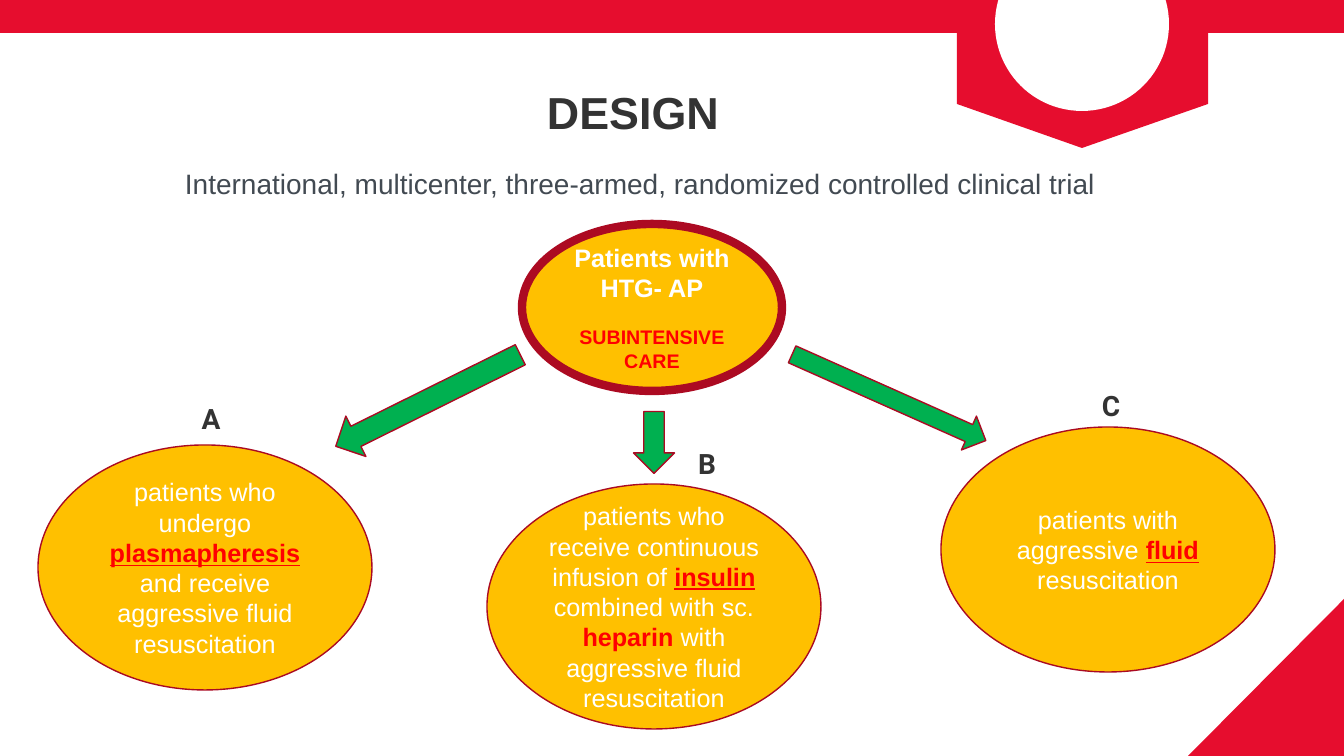
from collections import namedtuple

from pptx import Presentation
from pptx.dml.color import RGBColor
from pptx.enum.shapes import MSO_SHAPE as Preset
from pptx.enum.text import MSO_ANCHOR as Anchor, PP_ALIGN as Align
from pptx.util import Emu, Pt

Box = namedtuple("Box", "left top width height")

EMU_PER_PX = 914400 / 100.8
PAGE_BOX = Box(0, 0, 1344, 756)
ARM_WIDTH, ARM_HEIGHT = 334, 245

RED, GOLD, GREEN, WHITE = "E60D2E", "FFC000", "00B050", "FFFFFF"
OUTLINE, ALERT, DARK, SLATE = "AA0A22", "FF0000", "333333", "424A52"


def px(length):
    return Emu(round(length * EMU_PER_PX))


def color(hex_value):
    return RGBColor.from_string(hex_value)


def paint(shape, fill, line=None, line_width=1):
    shape.shadow.inherit = False
    shape.fill.solid()
    shape.fill.fore_color.rgb = color(fill)
    if line:
        shape.line.color.rgb = color(line)
        shape.line.width = Pt(line_width)
    else:
        shape.line.fill.background()


def add_preset(page, preset, box, fill, line=None, line_width=1):
    shape = page.shapes.add_shape(preset, *map(px, box))
    paint(shape, fill, line, line_width)
    return shape


def add_polygon(page, points, fill):
    builder = page.shapes.build_freeform(*points[0], scale=EMU_PER_PX)
    builder.add_line_segments(points[1:], close=True)
    paint(builder.convert_to_shape(), fill)


def style(font, size, hex_value, bold=False, name="Arial"):
    font.name, font.size, font.bold = name, Pt(size), bold
    font.color.rgb = color(hex_value)


def add_label(page, box, text, size, hex_value, bold=False, name="Arial",
              align=Align.CENTER):
    frame = page.shapes.add_textbox(*map(px, box)).text_frame
    frame.word_wrap = True
    para = frame.paragraphs[0]
    para.text, para.alignment = text, align
    style(para.font, size, hex_value, bold, name)
    return frame


def add_decoration(page, box):
    right, bottom = box.left + box.width, box.top + box.height
    add_preset(page, Preset.RECTANGLE, box._replace(height=33), RED)
    # Corner triangle
    add_polygon(page, [(right, bottom - 157), (right, bottom),
                       (right - 156, bottom)], RED)
    # Shield with a round opening
    left, top, width = box.left + 957, box.top, 251
    add_polygon(page, [(left, top), (left + width, top),
                       (left + width, top + 104),
                       (left + width / 2, top + 148), (left, top + 104)], RED)
    add_preset(page, Preset.OVAL, Box(left + 38, top - 63, 174, 174), WHITE)


def add_heading(page, box):
    add_label(page, Box(box.left + 328, box.top, 260, 64), "DESIGN",
              32, DARK, bold=True)
    add_label(page, Box(box.left, box.top + 82, box.width, 44),
              "International, multicenter, three-armed, randomized "
              "controlled clinical trial", 20, SLATE, align=Align.LEFT)


def add_hub(page, box):
    oval = add_preset(page, Preset.OVAL, box, GOLD, "AC0A22", 6)
    frame = oval.text_frame
    frame.word_wrap, frame.vertical_anchor = True, Anchor.MIDDLE
    group = frame.paragraphs[0]
    group.text = "Patients with HTG- AP"
    style(group.font, 18, WHITE, bold=True)
    care = frame.add_paragraph()
    care.text = "SUBINTENSIVE CARE"
    care.space_before = Pt(16)
    style(care.font, 14, ALERT, bold=True)
    for para in frame.paragraphs:
        para.alignment = Align.CENTER


def add_arm(page, box, letter, letter_center, letter_top, spans):
    """Draw one trial arm; spans are (text, highlighted, underlined)."""
    frame = add_label(page, Box(box.left + letter_center - 20,
                                box.top + letter_top, 40, 44),
                      letter, 20, DARK, bold=True, name="Roboto")
    frame.margin_left = frame.margin_right = 0

    oval = add_preset(page, Preset.OVAL, box, GOLD, OUTLINE)
    frame = oval.text_frame
    frame.word_wrap, frame.vertical_anchor = True, Anchor.MIDDLE
    para = frame.paragraphs[0]
    para.alignment = Align.CENTER
    for text, highlighted, underlined in spans:
        span = para.add_run()
        span.text = text
        style(span.font, 18, ALERT if highlighted else WHITE, highlighted)
        span.font.underline = underlined


def add_arrow(page, box, angle):
    arrow = add_preset(page, Preset.RIGHT_ARROW, box, GREEN, OUTLINE)
    arrow.rotation = angle


# Position, letter, letter centre and top within the oval, wording
ARMS = [
    (38, 445, "A", 173, -48, [
        ("patients who undergo ", False, False),
        ("plasmapheresis", True, True),
        (" and receive aggressive fluid resuscitation", False, False)]),
    (487, 484, "B", 220, -42, [
        ("patients who receive continuous infusion of ", False, False),
        ("insulin", True, True),
        (" combined with sc. ", False, False),
        ("heparin", True, False),
        (" with aggressive fluid resuscitation", False, False)]),
    (941, 427, "C", 170, -43, [
        ("patients with aggressive ", False, False),
        ("fluid", True, True),
        (" resuscitation", False, False)]),
]
ARROWS = [
    (Box(325, 378, 206, 45), 153.6),
    (Box(623, 422, 62, 41), 90),
    (Box(783, 379, 212, 37), 24),
]


def main():
    deck = Presentation()
    deck.slide_width, deck.slide_height = px(PAGE_BOX.width), px(PAGE_BOX.height)
    page = deck.slides.add_slide(deck.slide_layouts[6])

    add_decoration(page, PAGE_BOX)
    add_heading(page, Box(175, 80, 1014, 126))
    add_hub(page, Box(522, 224, 260, 167))
    for left, top, *content in ARMS:
        add_arm(page, Box(left, top, ARM_WIDTH, ARM_HEIGHT), *content)
    for box, angle in ARROWS:
        add_arrow(page, box, angle)

    deck.save("out.pptx")


if __name__ == "__main__":
    main()
